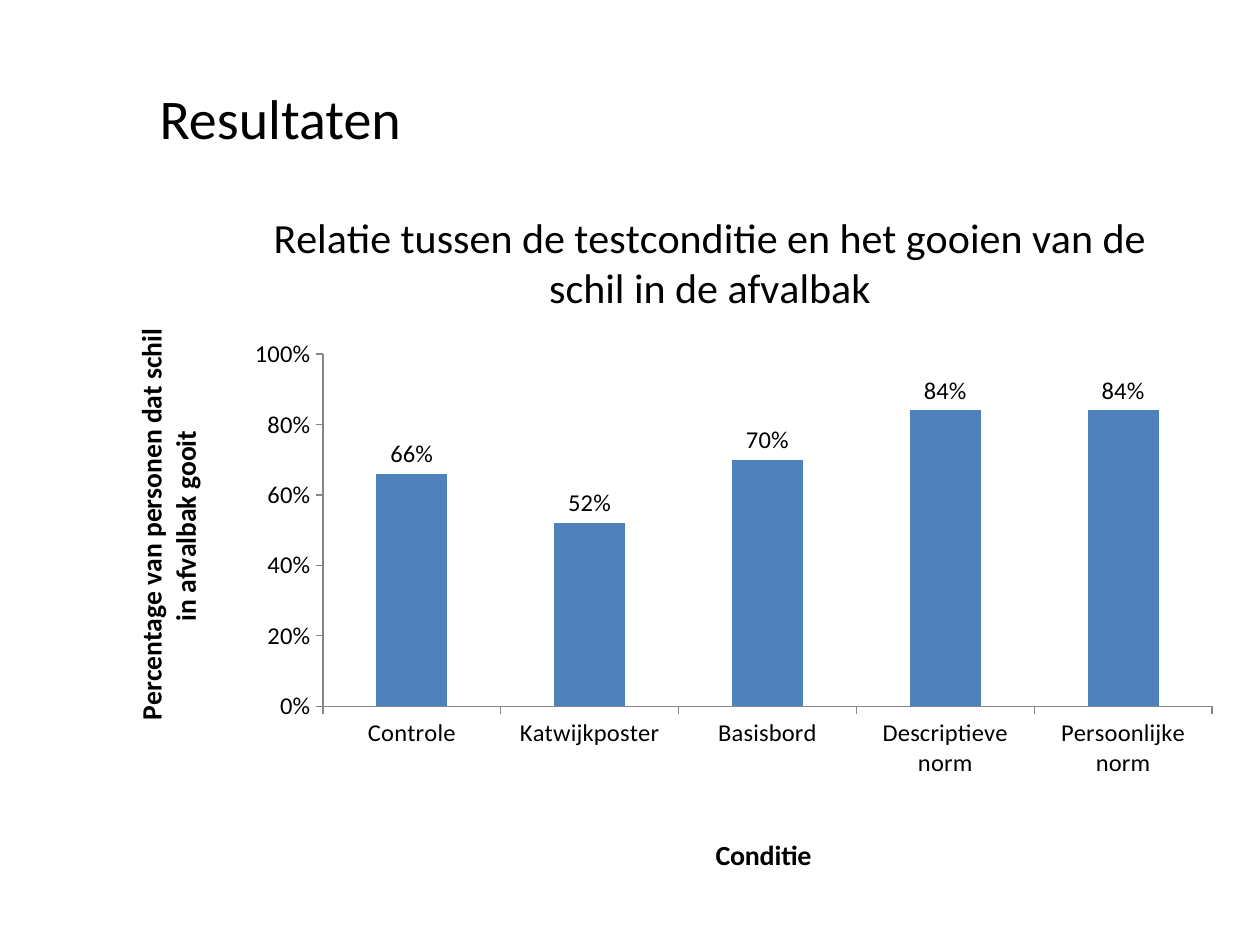
from lxml import etree
from pptx import Presentation
from pptx.chart.data import CategoryChartData
from pptx.dml.color import RGBColor
from pptx.enum.chart import XL_CHART_TYPE as ChartType
from pptx.enum.chart import XL_LABEL_POSITION as LabelPosition
from pptx.enum.chart import XL_TICK_MARK as TickMark
from pptx.enum.text import MSO_ANCHOR as Anchor
from pptx.enum.text import PP_ALIGN as Align
from pptx.oxml.ns import qn
from pptx.util import Pt

PX_PER_INCH = 126
BLACK = RGBColor(0x00, 0x00, 0x00)
BLUE = RGBColor(0x4F, 0x81, 0xBD)
GRAY = RGBColor(0x86, 0x86, 0x86)
FONT = "Calibri"
RESULTS = {
    "Controle": 0.66,
    "Katwijkposter": 0.52,
    "Basisbord": 0.7,
    "Descriptieve norm": 0.84,
    "Persoonlijke norm": 0.84,
}


def px(length):
    return round(length * 914400 / PX_PER_INCH)


def set_values(target, values):
    for name, value in values.items():
        setattr(target, name, value)


def format_font(font, size, bold=False):
    set_values(font, {"name": FONT, "size": Pt(size), "bold": bold})
    font.color.rgb = BLACK


def set_layout(element, **fractions):
    """Place a chart part by fractions of the chart's width and height."""
    for old_layout in element.findall(qn("c:layout")):
        element.remove(old_layout)
    layout = etree.Element(qn("c:layout"))
    manual = etree.SubElement(layout, qn("c:manualLayout"))
    settings = {"xMode": "edge", "yMode": "edge", **fractions}
    if "w" in fractions:
        settings = {"layoutTarget": "inner", **settings}
    for name, value in settings.items():
        etree.SubElement(manual, qn(f"c:{name}")).set("val", str(value))
    text = element.find(qn("c:tx"))
    element.insert(0 if text is None else element.index(text) + 1, layout)


def add_chart_title(title, text, size, bold, x, y):
    title.text_frame.text = text
    for paragraph in title.text_frame.paragraphs:
        format_font(paragraph.font, size, bold)
        for run in paragraph.runs:
            format_font(run.font, size, bold)
    set_layout(title._element, x=x, y=y)


def format_axis(axis):
    set_values(axis, {
        "has_major_gridlines": False,
        "major_tick_mark": TickMark.OUTSIDE,
        "minor_tick_mark": TickMark.NONE,
    })
    format_font(axis.tick_labels.font, 14)
    axis.format.line.color.rgb = GRAY
    axis.format.line.width = Pt(0.75)


def format_bars(plot):
    set_values(plot, {"gap_width": 150, "vary_by_categories": False,
                      "has_data_labels": True})
    fill = plot.series[0].format.fill
    fill.solid()
    fill.fore_color.rgb = BLUE
    labels = plot.data_labels
    set_values(labels, {
        "show_value": True,
        "number_format": "0%",
        "number_format_is_linked": False,
        "position": LabelPosition.OUTSIDE_END,
    })
    format_font(labels.font, 14)


def add_title(slide):
    title = slide.shapes.title
    set_values(title, {"left": px(147), "top": px(38),
                       "width": px(1082), "height": px(158)})
    title.text_frame.text = "Resultaten"
    title.text_frame.vertical_anchor = Anchor.MIDDLE
    paragraph = title.text_frame.paragraphs[0]
    paragraph.alignment = Align.LEFT
    format_font(paragraph.runs[0].font, 32)


def add_results_chart(slide):
    data = CategoryChartData(number_format="0%")
    data.categories = list(RESULTS)
    data.add_series("Series 1", list(RESULTS.values()))
    chart = slide.shapes.add_chart(ChartType.COLUMN_CLUSTERED, px(95), px(195),
                                   px(1140), px(687), data).chart
    format_font(chart.font, 10)
    chart.has_legend = False
    chart.has_title = True
    add_chart_title(
        chart.chart_title,
        "Relatie tussen de testconditie en het gooien van de schil in de afvalbak",
        24, False, 0.15, 0.01)

    category_axis, value_axis = chart.category_axis, chart.value_axis
    format_axis(category_axis)
    add_chart_title(category_axis.axis_title, "Conditie", 16, True, 0.54, 0.94)

    format_axis(value_axis)
    set_values(value_axis, {"minimum_scale": 0, "maximum_scale": 1,
                            "major_unit": 0.2})
    set_values(value_axis.tick_labels, {"number_format": "0%",
                                        "number_format_is_linked": False})
    add_chart_title(value_axis.axis_title,
                    "Percentage van personen dat schil\nin afvalbak gooit",
                    16, True, 0.03, 0.2)
    body = value_axis.axis_title.text_frame._txBody.find(qn("a:bodyPr"))
    body.set("rot", "-5400000")
    body.set("vert", "horz")

    format_bars(chart.plots[0])
    plot_area = chart._chartSpace.find(f".//{qn('c:plotArea')}")
    set_layout(plot_area, x=0.2, y=0.235, w=0.78, h=0.52)


def main():
    presentation = Presentation()
    set_values(presentation, {"slide_width": px(1260), "slide_height": px(945)})
    slide = presentation.slides.add_slide(presentation.slide_layouts[5])
    add_title(slide)
    add_results_chart(slide)
    presentation.save("out.pptx")


if __name__ == "__main__":
    main()
